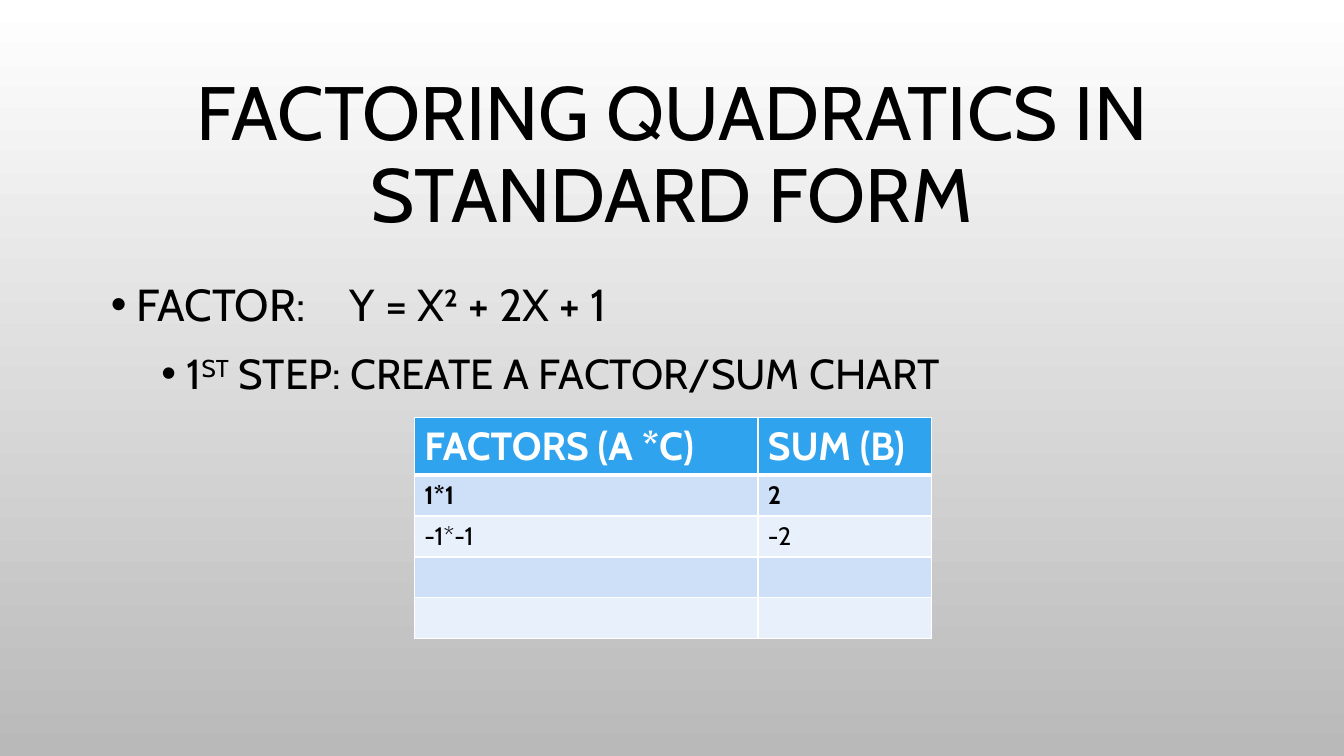
from dataclasses import dataclass

import pptx
import pptx.dml.color
import pptx.enum.text
import pptx.oxml.ns
import pptx.util
from lxml import etree
from pptx.util import Cm, Pt

RGBColor = pptx.dml.color.RGBColor
BLACK = RGBColor(0x00, 0x00, 0x00)
WHITE = RGBColor(0xFF, 0xFF, 0xFF)
GREY = RGBColor(0xB9, 0xB9, 0xB9)
HEADER_BLUE = RGBColor(0x2F, 0xA3, 0xEE)
BAND_BLUES = (RGBColor(0xCD, 0xE0, 0xF8), RGBColor(0xE8, 0xF0, 0xFC))
FONT = "Cabin"
HANGING = Cm(0.64)
EQUATION_TAB = Cm(6.02)


@dataclass
class Run:
    text: str
    superscript: bool = False


@dataclass
class Bullet:
    runs: list[Run]
    level: int
    size: int
    margin: pptx.util.Length
    space_before: int
    tab: pptx.util.Length | None = None


@dataclass
class Row:
    factors: str = ""
    total: str = ""
    bold: bool = False


BULLETS = [
    Bullet([Run("FACTOR:\tY = X² + 2X + 1")], 0, 32, HANGING, 0, EQUATION_TAB),
    Bullet(
        [Run("1"), Run("ST", superscript=True), Run(" STEP: CREATE A FACTOR/SUM CHART")],
        1, 30, Cm(1.91), 5,
    ),
]
ROWS = [
    Row("FACTORS (A *C)", "SUM (B)", bold=True),
    Row("1*1", "2", bold=True),
    Row("-1*-1", "-2"),
    Row(),
    Row(),
]


def add_element(parent, tag: str, **attributes):
    element = etree.SubElement(parent, pptx.oxml.ns.qn(tag))
    for key, value in attributes.items():
        element.set(key, str(value))
    return element


def style_font(font, size: int, color: RGBColor, bold: bool = False) -> None:
    font.name = FONT
    font.size = Pt(size)
    font.bold = bold
    font.color.rgb = color


def place(shape, left: float, top: float, width: float, height: float) -> None:
    """Position a shape, with lengths in centimetres."""
    shape.left, shape.top = Cm(left), Cm(top)
    shape.width, shape.height = Cm(width), Cm(height)


def write_bullet(paragraph, bullet: Bullet) -> None:
    paragraph.level = bullet.level
    paragraph.line_spacing = 1.2
    paragraph.space_before = Pt(bullet.space_before)
    properties = paragraph._p.get_or_add_pPr()
    properties.set("marL", str(bullet.margin))
    properties.set("indent", str(-HANGING))
    add_element(add_element(properties, "a:buClr"), "a:srgbClr", val=BLACK)
    add_element(properties, "a:buFont", typeface="Arial")
    add_element(properties, "a:buChar", char="•")
    if bullet.tab is not None:
        tabs = add_element(properties, "a:tabLst")
        add_element(tabs, "a:tab", pos=bullet.tab, algn="l")
    style_font(paragraph.font, bullet.size, BLACK)
    for part in bullet.runs:
        run = paragraph.add_run()
        run.text = part.text
        if part.superscript:
            run.font._element.set("baseline", "30000")


def add_borders(cell, top: int, bottom: int) -> None:
    """Draw white cell borders: given points above and below, 1 pt at the sides."""
    properties = cell._tc.get_or_add_tcPr()
    for side, width in (("L", 1), ("R", 1), ("T", top), ("B", bottom)):
        line = add_element(properties, f"a:ln{side}", w=Pt(width))
        add_element(add_element(line, "a:solidFill"), "a:srgbClr", val=WHITE)


def add_factor_table(slide) -> None:
    frame = slide.shapes.add_table(len(ROWS), 2, Cm(10.44), Cm(10.52), Cm(13.03), Cm(5.57))
    table = frame.table
    table.columns[0].width = Cm(8.66)
    table.columns[1].width = Cm(4.37)
    for index, row in enumerate(ROWS):
        header = index == 0
        table.rows[index].height = Cm(1.45 if header else 1.03)
        for column, text in enumerate((row.factors, row.total)):
            cell = table.cell(index, column)
            add_borders(cell, top=3 if index == 1 else 1, bottom=3 if header else 1)
            cell.fill.solid()
            cell.fill.fore_color.rgb = HEADER_BLUE if header else BAND_BLUES[(index - 1) % 2]
            paragraph = cell.text_frame.paragraphs[0]
            if text:
                paragraph.text = text
            style_font(paragraph.font, 28 if header else 18, WHITE if header else BLACK, row.bold)


def main() -> None:
    presentation = pptx.Presentation()
    presentation.slide_width = Cm(33.87)
    presentation.slide_height = Cm(19.05)
    slide = presentation.slides.add_slide(presentation.slide_layouts[1])

    backdrop = slide.background.fill
    backdrop.gradient()
    backdrop.gradient_angle = 270
    for stop, color in zip(backdrop.gradient_stops, (WHITE, GREY)):
        stop.color.rgb = color

    title = slide.shapes.title
    place(title, 2.54, 1.73, 28.78, 4.45)
    title.text_frame.auto_size = pptx.enum.text.MSO_AUTO_SIZE.NONE
    title.text_frame.vertical_anchor = pptx.enum.text.MSO_ANCHOR.MIDDLE
    heading = title.text_frame.paragraphs[0]
    heading.text = "FACTORING QUADRATICS IN STANDARD FORM"
    heading.alignment = pptx.enum.text.PP_ALIGN.CENTER
    heading.line_spacing = 0.9
    style_font(heading.font, 54, BLACK)

    steps = slide.placeholders[1]
    place(steps, 2.54, 6.58, 28.78, 9.5)
    steps.text_frame.auto_size = pptx.enum.text.MSO_AUTO_SIZE.NONE
    for index, bullet in enumerate(BULLETS):
        frame = steps.text_frame
        write_bullet(frame.add_paragraph() if index else frame.paragraphs[0], bullet)

    add_factor_table(slide)
    presentation.save("out.pptx")


if __name__ == "__main__":
    main()
